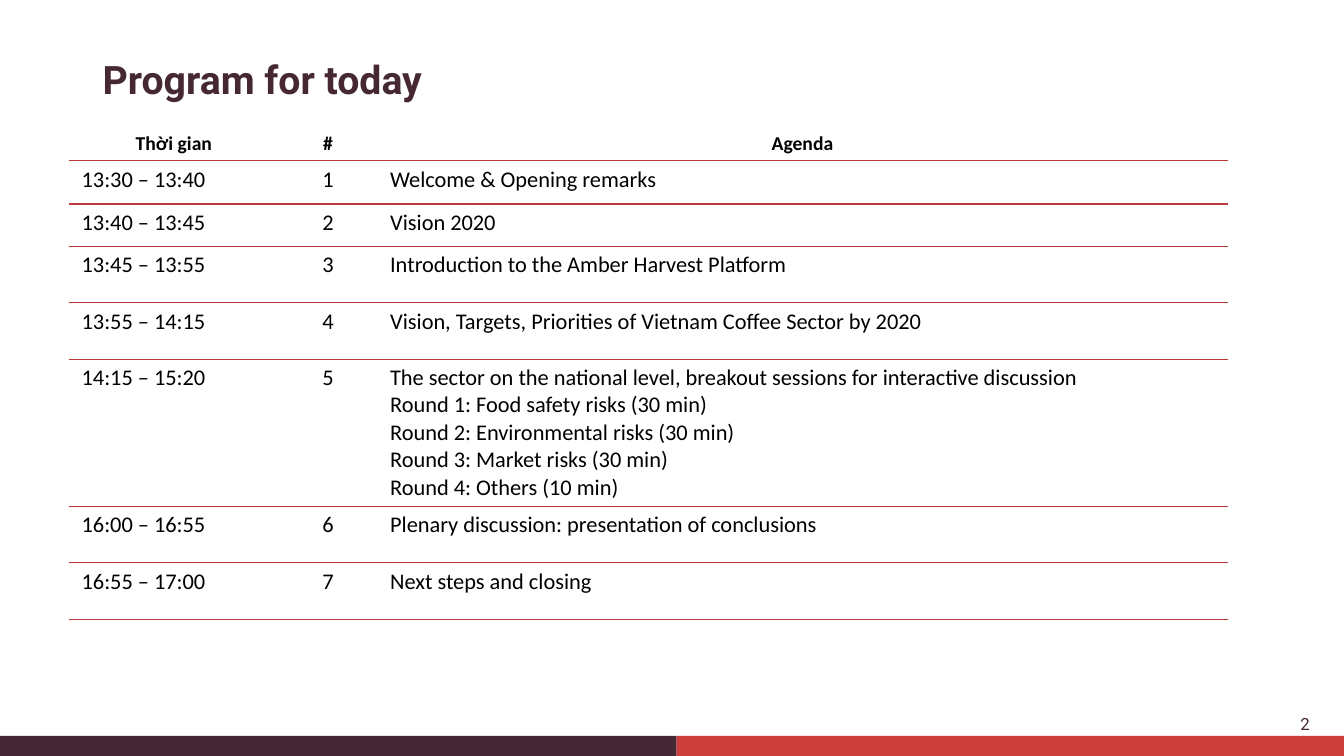
from dataclasses import dataclass
from typing import Any

from lxml import etree
from pptx import Presentation
from pptx import util as u
from pptx.dml.color import RGBColor
from pptx.enum import shapes, text
from pptx.oxml.ns import qn


@dataclass(frozen=True)
class Theme:
    plum: str = "452834"
    red: str = "CC3D3B"
    rule: str = "BC3A3B"
    ink: str = "000000"
    head: str = "Roboto"
    body: str = "Calibri"
    title: int = 28
    label: int = 14
    cell: int = 16
    page: int = 12


@dataclass(frozen=True)
class Band:
    left: float
    width: float
    color: str


@dataclass(frozen=True)
class Label:
    words: str
    box: tuple[float, float, float, float]
    align: Any
    space: float
    font: dict[str, Any]


@dataclass(frozen=True)
class Item:
    time: str
    num: str
    topic: str
    height: float


T = Theme()
LEFT, MID, RIGHT = text.PP_ALIGN.LEFT, text.PP_ALIGN.CENTER, text.PP_ALIGN.RIGHT
PLAIN = "{2D5ABB26-0587-4C30-8999-92F81FD0307C}"  # no style, no grid

BANDS = [Band(6.71, 6.63, T.red), Band(0, 6.71, T.plum)]
LABELS = [
    Label("Program for today", (0.92, 0.36, 11.5, 0.9), LEFT, 0.9,
          {"name": T.head, "size": u.Pt(T.title), "bold": True}),
    Label("2", (10.09, 6.98, 3, 0.4), RIGHT, 1.0,
          {"name": T.head, "size": u.Pt(T.page), "bold": False}),
]
ROUNDS = "\n".join([
    "The sector on the national level, breakout sessions for interactive discussion",
    "Round 1: Food safety risks (30 min)",
    "Round 2: Environmental risks (30 min)",
    "Round 3: Market risks (30 min)",
    "Round 4: Others (10 min)",
])
ITEMS = [
    Item("Thời gian", "#", "Agenda", 0.33),
    Item("13:30 – 13:40", "1", "Welcome & Opening remarks", 0.43),
    Item("13:40 – 13:45", "2", "Vision 2020", 0.42),
    Item("13:45 – 13:55", "3", "Introduction to the Amber Harvest Platform", 0.56),
    Item("13:55 – 14:15", "4",
         "Vision, Targets, Priorities of Vietnam Coffee Sector by 2020", 0.56),
    Item("14:15 – 15:20", "5", ROUNDS, 1.46),
    Item("16:00 – 16:55", "6", "Plenary discussion: presentation of conclusions", 0.56),
    Item("16:55 – 17:00", "7", "Next steps and closing", 0.56),
]
COLS = [2.09, 0.97, 8.44]


def apply(obj: Any, form: dict[str, Any]) -> None:
    for key, val in form.items():
        setattr(obj, key, val)


def style(par: Any, align: Any, form: dict[str, Any], color: str) -> None:
    par.alignment = align
    apply(par.font, form)
    par.font.color.rgb = RGBColor.from_string(color)


def add_band(slide: Any, band: Band) -> None:
    box = slide.shapes.add_shape(
        shapes.MSO_SHAPE.RECTANGLE, u.Inches(band.left), u.Inches(7.3),
        u.Inches(band.width), u.Inches(0.2))
    box.shadow.inherit = False
    box.fill.solid()
    box.fill.fore_color.rgb = RGBColor.from_string(band.color)
    box.line.fill.background()


def add_label(slide: Any, label: Label) -> None:
    frame = slide.shapes.add_textbox(*map(u.Inches, label.box)).text_frame
    apply(frame, {"word_wrap": True, "vertical_anchor": text.MSO_ANCHOR.MIDDLE})
    par = frame.paragraphs[0]
    par.text = label.words
    par.line_spacing = label.space
    style(par, label.align, label.font, T.plum)


def underline(cell: Any) -> None:
    line = etree.Element(qn("a:lnB"), w=str(u.Pt(1)))
    fill = etree.SubElement(line, qn("a:solidFill"))
    etree.SubElement(fill, qn("a:srgbClr"), val=T.rule)
    cell._tc.get_or_add_tcPr().insert(0, line)


def fill_cell(cell: Any, words: str, align: Any, top: bool) -> None:
    side, edge = u.Inches(0.13), u.Inches(0.05)
    apply(cell, {"margin_left": side, "margin_right": side,
                 "margin_top": edge, "margin_bottom": edge, "text": words})
    cell.fill.background()
    underline(cell)
    size = T.label if top else T.cell
    for par in cell.text_frame.paragraphs:
        style(par, align, {"name": T.body, "size": u.Pt(size), "bold": top}, T.ink)


def add_agenda(slide: Any, items: list[Item]) -> None:
    high = sum(item.height for item in items)
    table = slide.shapes.add_table(
        len(items), len(COLS), u.Inches(0.68), u.Inches(1.26),
        u.Inches(sum(COLS)), u.Inches(high)).table
    apply(table, {"first_row": False, "horz_banding": False})
    table._tbl.tblPr.find(qn("a:tableStyleId")).text = PLAIN
    for col, width in zip(table.columns, COLS):
        col.width = u.Inches(width)
    for r, item in enumerate(items):
        table.rows[r].height = u.Inches(item.height)
        for c, words in enumerate((item.time, item.num, item.topic)):
            align = MID if r == 0 or c == 1 else LEFT
            fill_cell(table.cell(r, c), words, align, r == 0)


def main() -> None:
    deck = Presentation()
    apply(deck, {"slide_width": u.Inches(13.33), "slide_height": u.Inches(7.5)})
    slide = deck.slides.add_slide(deck.slide_layouts[6])
    # Footer bands
    for band in BANDS:
        add_band(slide, band)
    # Title and page number
    for label in LABELS:
        add_label(slide, label)
    # Agenda table
    add_agenda(slide, ITEMS)
    deck.save("out.pptx")


if __name__ == "__main__":
    main()
